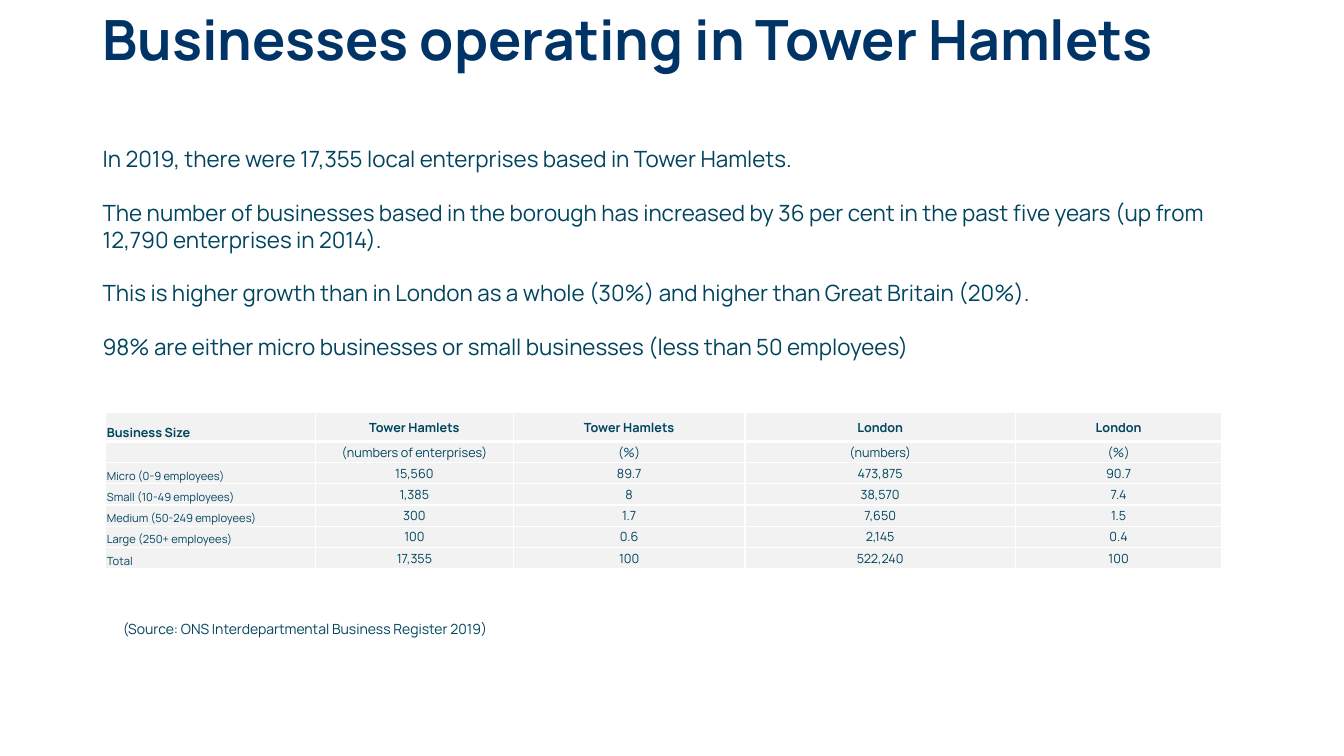
from lxml.etree import SubElement
from pptx import Presentation
from pptx.dml.color import RGBColor
from pptx.enum.text import MSO_ANCHOR as Anchor, PP_ALIGN as Align
from pptx.oxml.ns import qn
from pptx.util import Inches, Pt

FONT = "Manrope"
COLORS = {"title": "003366", "text": "00445E", "cell": "F2F2F2", "border": "FFFFFF"}

STATEMENTS = [
    "In 2019, there were 17,355 local enterprises based in Tower Hamlets.",
    "The number of businesses based in the borough has increased by 36 per cent "
    "in the past five years (up from 12,790 enterprises in 2014).",
    "This is higher growth than in London as a whole (30%) and higher than Great Britain (20%).",
    "98% are either micro businesses or small businesses (less than 50 employees)",
]
BUSINESS_SIZES = [
    ["Business Size", "Tower Hamlets", "Tower Hamlets", "London", "London"],
    ["", "(numbers of enterprises)", "(%)", "(numbers)", "(%)"],
    ["Micro (0-9 employees)", "15,560", "89.7", "473,875", "90.7"],
    ["Small (10-49 employees)", "1,385", "8", "38,570", "7.4"],
    ["Medium (50-249 employees)", "300", "1.7", "7,650", "1.5"],
    ["Large (250+ employees)", "100", "0.6", "2,145", "0.4"],
    ["Total", "17,355", "100", "522,240", "100"],
]
COLUMN_WIDTHS = [2.08, 1.96, 2.3, 2.68, 2.05]
HEADER_HEIGHT, ROW_HEIGHT = 0.29, 0.21


def add_run(paragraph, text, size, color="text", bold=False):
    run = paragraph.add_run()
    run.text = text
    run.font.name = FONT
    run.font.size = Pt(size)
    run.font.bold = bold
    run.font.color.rgb = RGBColor.from_string(COLORS[color])


def add_text(slide, box, lines, size, color="text", bold=False,
             gap=0, spacing=None, top_inset=0.05):
    frame = slide.shapes.add_textbox(*map(Inches, box)).text_frame
    frame.word_wrap = True
    frame.vertical_anchor = Anchor.TOP
    frame.margin_top = Inches(top_inset)
    for index, line in enumerate(lines):
        paragraph = frame.paragraphs[0] if index == 0 else frame.add_paragraph()
        if index:
            paragraph.space_before = Pt(gap)
        if spacing:
            paragraph.line_spacing = spacing
        add_run(paragraph, line, size, color, bold)


def set_borders(cell, top, bottom):
    properties = cell._tc.get_or_add_tcPr()
    for side, width in (("L", 1), ("R", 1), ("T", top), ("B", bottom)):
        line = SubElement(properties, qn(f"a:ln{side}"), w=str(Pt(width)))
        fill = SubElement(line, qn("a:solidFill"))
        SubElement(fill, qn("a:srgbClr"), val=COLORS["border"])


def fill_cell(cell, text, row, column):
    cell.margin_left = cell.margin_right = cell.margin_top = Inches(0.01)
    cell.margin_bottom = 0
    cell.vertical_anchor = Anchor.MIDDLE if column else Anchor.BOTTOM
    set_borders(cell, 3 if row == 1 else 1, 3 if row == 0 else 1)
    cell.fill.solid()
    cell.fill.fore_color.rgb = RGBColor.from_string(COLORS["cell"])
    paragraph = cell.text_frame.paragraphs[0]
    paragraph.alignment = Align.CENTER if column else Align.LEFT
    if text:
        add_run(paragraph, text, 9 if column or row == 0 else 8, bold=row == 0)
    else:
        SubElement(paragraph._p, qn("a:endParaRPr"), sz="800")


def add_size_table(slide, left, top):
    height = HEADER_HEIGHT + ROW_HEIGHT * (len(BUSINESS_SIZES) - 1)
    table = slide.shapes.add_table(
        len(BUSINESS_SIZES), len(COLUMN_WIDTHS), Inches(left), Inches(top),
        Inches(sum(COLUMN_WIDTHS)), Inches(height)).table
    for column, width in zip(table.columns, COLUMN_WIDTHS):
        column.width = Inches(width)
    for row, values in enumerate(BUSINESS_SIZES):
        table.rows[row].height = Inches(ROW_HEIGHT if row else HEADER_HEIGHT)
        for column, text in enumerate(values):
            fill_cell(table.cell(row, column), text, row, column)


def main():
    presentation = Presentation()
    presentation.slide_width = Inches(13.33)
    presentation.slide_height = Inches(7.5)
    slide = presentation.slides.add_slide(presentation.slide_layouts[6])
    add_text(slide, (0.92, 0, 10.69, 1.45), ["Businesses operating in Tower Hamlets"],
             39.6, "title", bold=True, spacing=0.9, top_inset=0.12)
    add_text(slide, (0.92, 1.39, 11.8, 2.26), STATEMENTS, 16, gap=19.2)
    add_size_table(slide, 1.05, 4.09)
    add_text(slide, (1.12, 6.11, 5.01, 0.27),
             ["(Source: ONS Interdepartmental Business Register 2019)"], 10)
    presentation.save("out.pptx")


if __name__ == "__main__":
    main()
